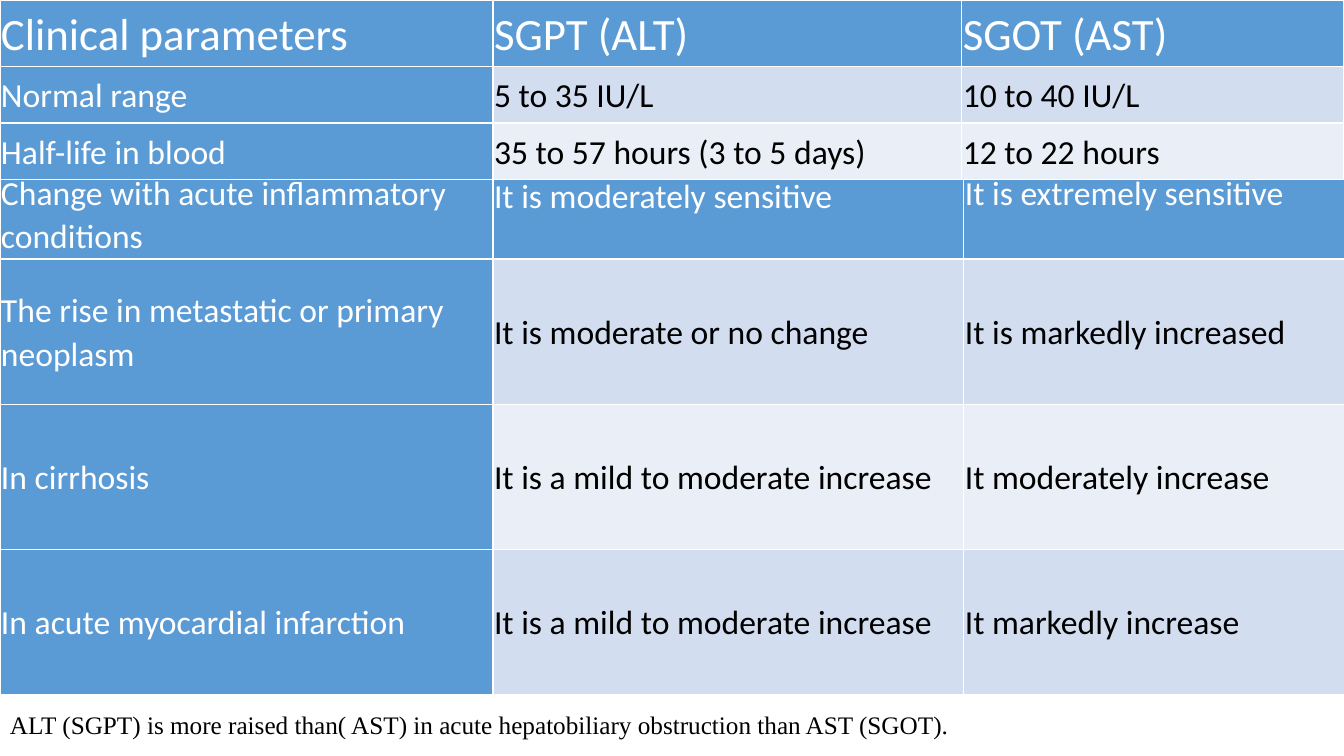
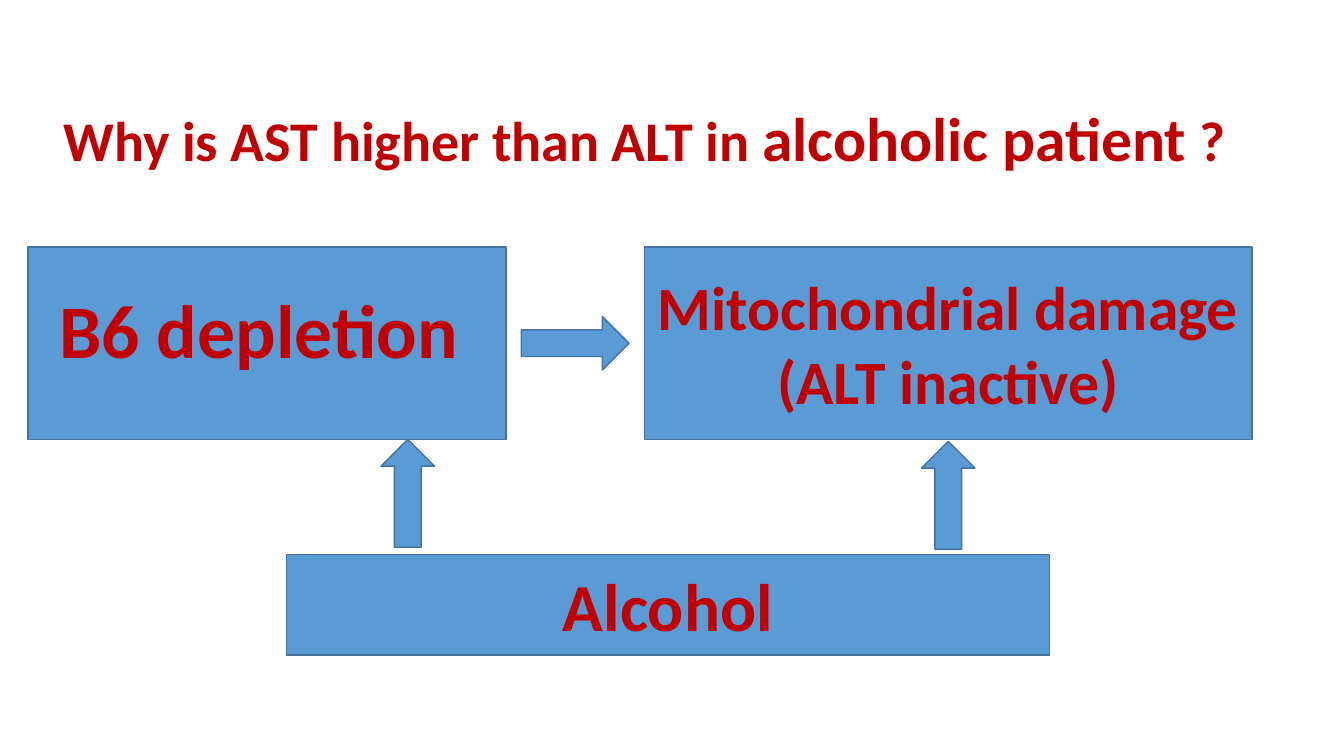
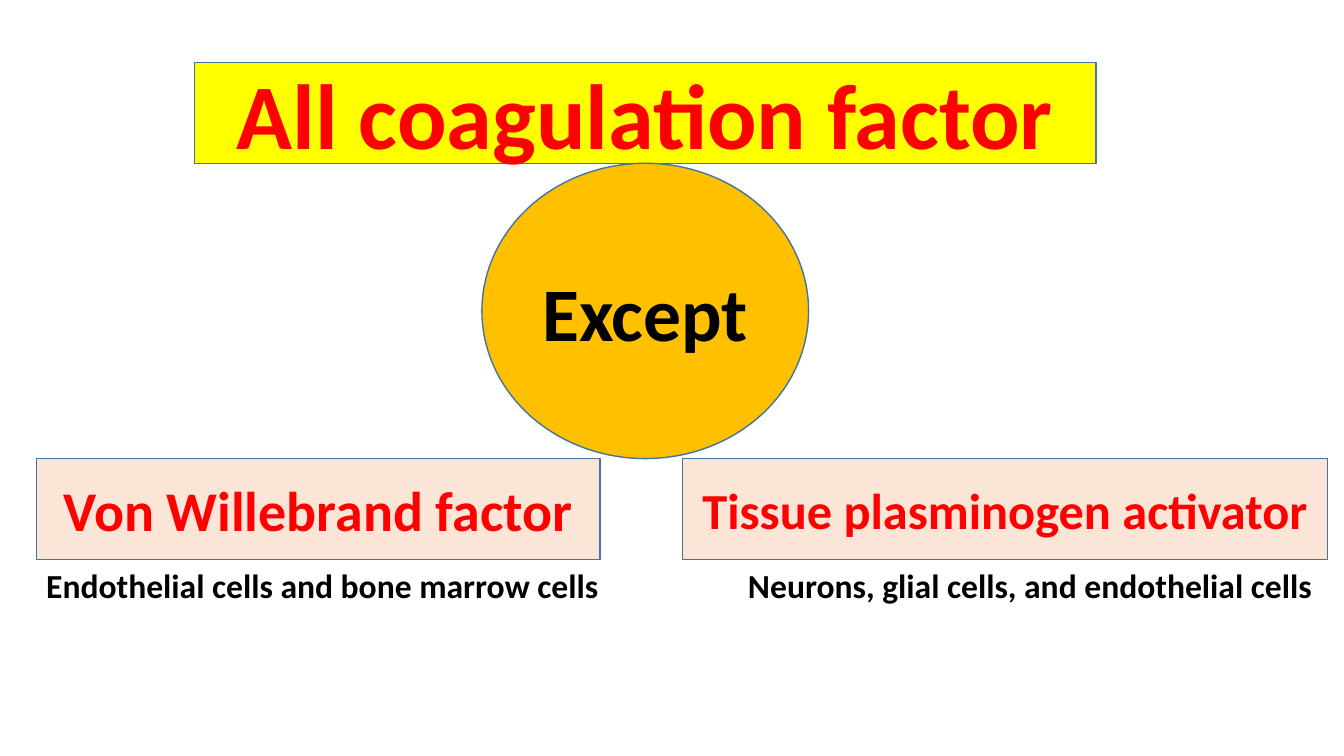
import dataclasses
from typing import Any

import pptx
import pptx.dml.color
import pptx.enum.shapes
import pptx.enum.text
import pptx.oxml
import pptx.oxml.ns
import pptx.util

Inches = pptx.util.Inches
RGBColor = pptx.dml.color.RGBColor
Shape = pptx.enum.shapes.MSO_SHAPE
Anchor = pptx.enum.text.MSO_ANCHOR
Align = pptx.enum.text.PP_ALIGN

# Shared colours and fonts
BLUE = RGBColor(0x5B, 0x9B, 0xD5)
BLUE_EDGE = RGBColor(0x43, 0x73, 0x9E)
BAND_DARK = RGBColor(0xD2, 0xDE, 0xEF)
BAND_LIGHT = RGBColor(0xEA, 0xEF, 0xF7)
PEACH = RGBColor(0xFB, 0xE5, 0xD6)
YELLOW = RGBColor(0xFF, 0xFF, 0x00)
AMBER = RGBColor(0xFF, 0xC0, 0x00)
DARK_RED = RGBColor(0xC0, 0x00, 0x00)
RED = RGBColor(0xFF, 0x00, 0x00)
BLACK = RGBColor(0x00, 0x00, 0x00)
WHITE = RGBColor(0xFF, 0xFF, 0xFF)
BODY_FONT = "Calibri"
NOTE_FONT = "Times New Roman"
CELL_MARGIN = 0.01
TABLE_SPACING = 1.07


@dataclasses.dataclass(frozen=True)
class Span:
    text: str
    size: float
    color: RGBColor = BLACK
    bold: bool = True
    font: str = BODY_FONT


@dataclasses.dataclass(frozen=True)
class Box:
    """A filled shape; each span is one centred paragraph."""
    kind: Any
    left: float
    top: float
    width: float
    height: float
    fill: RGBColor = BLUE
    spans: tuple[Span, ...] = ()
    bottom_inset: float = 0.05


@dataclasses.dataclass(frozen=True)
class Label:
    """A text box; its spans share one paragraph."""
    left: float
    top: float
    width: float
    height: float
    spans: tuple[Span, ...]
    spacing: float = 1.0
    left_inset: float = 0.1


@dataclasses.dataclass(frozen=True)
class Grid:
    top: float
    columns: tuple[float, ...]
    heights: tuple[float, ...]
    rows: tuple[tuple[str, ...], ...]
    header_size: float
    header_anchor: Any = Anchor.MIDDLE
    header_insets: tuple[float, ...] = (CELL_MARGIN,) * 3


def set_all(target: Any, values: dict[str, Any]) -> None:
    for name, value in values.items():
        setattr(target, name, value)


def add_span(para: Any, span: Span) -> None:
    run = para.add_run()
    run.text = span.text
    set_all(run.font, {"size": pptx.util.Pt(span.size), "name": span.font, "bold": span.bold})
    run.font.color.rgb = span.color


def place(item: Box | Label) -> tuple[Any, ...]:
    return tuple(Inches(n) for n in (item.left, item.top, item.width, item.height))


def draw_box(page: Any, box: Box) -> None:
    shape = page.shapes.add_shape(box.kind, *place(box))
    shape.shadow.inherit = False
    shape.fill.solid()
    shape.fill.fore_color.rgb = box.fill
    shape.line.color.rgb = BLUE_EDGE
    shape.line.width = pptx.util.Pt(1)
    frame = shape.text_frame
    set_all(frame, {"word_wrap": True, "vertical_anchor": Anchor.MIDDLE,
                    "margin_bottom": Inches(box.bottom_inset)})
    for index, span in enumerate(box.spans):
        para = frame.add_paragraph() if index else frame.paragraphs[0]
        para.alignment = Align.CENTER
        add_span(para, span)


def draw_label(page: Any, label: Label) -> None:
    frame = page.shapes.add_textbox(*place(label)).text_frame
    set_all(frame, {"word_wrap": True, "margin_left": Inches(label.left_inset)})
    para = frame.paragraphs[0]
    para.line_spacing = label.spacing
    for span in label.spans:
        add_span(para, span)


def add_borders(cell: Any) -> None:
    properties = cell._tc.get_or_add_tcPr()
    for position, side in enumerate(("lnL", "lnR", "lnT", "lnB")):
        properties.insert(position, pptx.oxml.parse_xml(
            f'<a:{side} {pptx.oxml.ns.nsdecls("a")} w="12700"><a:solidFill>'
            f'<a:srgbClr val="{WHITE}"/></a:solidFill></a:{side}>'))


def draw_grid(page: Any, grid: Grid) -> None:
    table = page.shapes.add_table(
        len(grid.rows), len(grid.columns), Inches(0), Inches(grid.top),
        Inches(sum(grid.columns)), Inches(sum(grid.heights))).table
    set_all(table, {"first_row": False, "horz_banding": False})
    for column, width in zip(table.columns, grid.columns):
        column.width = Inches(width)
    for row, height in zip(table.rows, grid.heights):
        row.height = Inches(height)
    for r, texts in enumerate(grid.rows):
        for c, text in enumerate(texts):
            cell = table.cell(r, c)
            heading = r == 0 or c == 0
            band = BAND_DARK if r % 2 else BAND_LIGHT
            cell.fill.solid()
            cell.fill.fore_color.rgb = BLUE if heading else band
            margin = Inches(CELL_MARGIN)
            set_all(cell, {
                "margin_left": margin, "margin_right": margin, "margin_bottom": margin,
                "margin_top": margin if r else Inches(grid.header_insets[c]),
                "vertical_anchor": Anchor.MIDDLE if r else grid.header_anchor})
            add_borders(cell)
            para = cell.text_frame.paragraphs[0]
            para.line_spacing = TABLE_SPACING
            add_span(para, Span(text, 24 if r else grid.header_size,
                                WHITE if heading else BLACK, bold=False))


def draw(page: Any, items: tuple[Any, ...]) -> None:
    painters = {Box: draw_box, Label: draw_label, Grid: draw_grid}
    for item in items:
        painters[type(item)](page, item)


# Slide 1: comparison of the two enzymes
CONDITIONS = Grid(
    1.68, (4.89, 4.67, 3.78), (0.89, 1.44, 1.44, 1.44),
    (("Change with acute inflammatory conditions", "It is moderately sensitive",
      "It is extremely sensitive"),
     ("The rise in metastatic or primary neoplasm", "It is moderate or no change",
      "It is markedly increased"),
     ("In cirrhosis", "It is a mild to moderate increase", "It moderately increase"),
     ("In acute myocardial infarction", "It is a mild to moderate increase",
      "It markedly increase")),
    header_size=24, header_anchor=Anchor.TOP, header_insets=(0.01, 0.04, 0.01))
PARAMETERS = Grid(
    0, (4.89, 4.65, 3.79), (0.66, 0.56, 0.56),
    (("Clinical parameters", "SGPT (ALT)", "SGOT (AST)"),
     ("Normal range", "5 to 35 IU/L", "10 to 40 IU/L"),
     ("Half-life in blood", "35 to 57 hours (3 to 5 days)", "12 to 22 hours")),
    header_size=32)
FOOTNOTE = Label(0, 6.97, 13.33, 0.43, (Span(
    "ALT (SGPT) is more raised than( AST) in acute hepatobiliary obstruction "
    "than AST (SGOT).", 18, bold=False, font=NOTE_FONT),), TABLE_SPACING)

# Slide 2: effect of alcohol
QUESTION = Label(0.28, 1.03, 12.14, 1, (
    Span("Why is AST higher than ALT in ", 40, DARK_RED),
    Span("alcoholic patient", 44, DARK_RED),
    Span(" ?", 40, DARK_RED)), 0.9, left_inset=0.35)
ALCOHOL_FLOW = (
    Box(Shape.RECTANGLE, 0.28, 2.45, 4.74, 1.91,
        spans=(Span("B6 depletion ", 54, DARK_RED),), bottom_inset=0.35),
    Box(Shape.RIGHT_ARROW, 5.17, 3.14, 1.07, 0.53),
    Box(Shape.RECTANGLE, 6.39, 2.45, 6.03, 1.91,
        spans=(Span("Mitochondrial damage", 44, DARK_RED),
               Span("(ALT inactive)", 44, DARK_RED))),
    Box(Shape.UP_ARROW, 9.14, 4.38, 0.53, 1.07),
    Box(Shape.RECTANGLE, 2.84, 5.5, 7.57, 1, spans=(Span("Alcohol", 48, DARK_RED),)),
    Box(Shape.UP_ARROW, 3.78, 4.36, 0.53, 1.07),
)

# Slide 3: coagulation factors and exceptions
COAGULATION = (
    Box(Shape.RECTANGLE, 1.93, 0.62, 8.94, 1, YELLOW,
        (Span("All coagulation factor", 66, RED),)),
    Box(Shape.OVAL, 4.78, 1.62, 3.24, 2.93, AMBER, (Span("Except", 54),)),
    Box(Shape.RECTANGLE, 0.36, 4.55, 5.59, 1, PEACH,
        (Span("Von Willebrand factor", 40, RED),)),
    Box(Shape.RECTANGLE, 6.77, 4.55, 6.4, 1, PEACH,
        (Span("Tissue plasminogen activator", 36, RED),)),
    Label(7.32, 5.56, 5.85, 0.5, (Span("Neurons, glial cells, and endothelial cells", 24),)),
    Label(0.36, 5.56, 5.83, 0.5, (Span("Endothelial cells and bone marrow cells", 24),)),
)


def main() -> None:
    deck = pptx.Presentation()
    set_all(deck, {"slide_width": Inches(13.33), "slide_height": Inches(7.5)})
    for items in ((CONDITIONS, FOOTNOTE, PARAMETERS), (QUESTION, *ALCOHOL_FLOW), COAGULATION):
        draw(deck.slides.add_slide(deck.slide_layouts[6]), items)
    deck.save("out.pptx")


if __name__ == "__main__":
    main()
